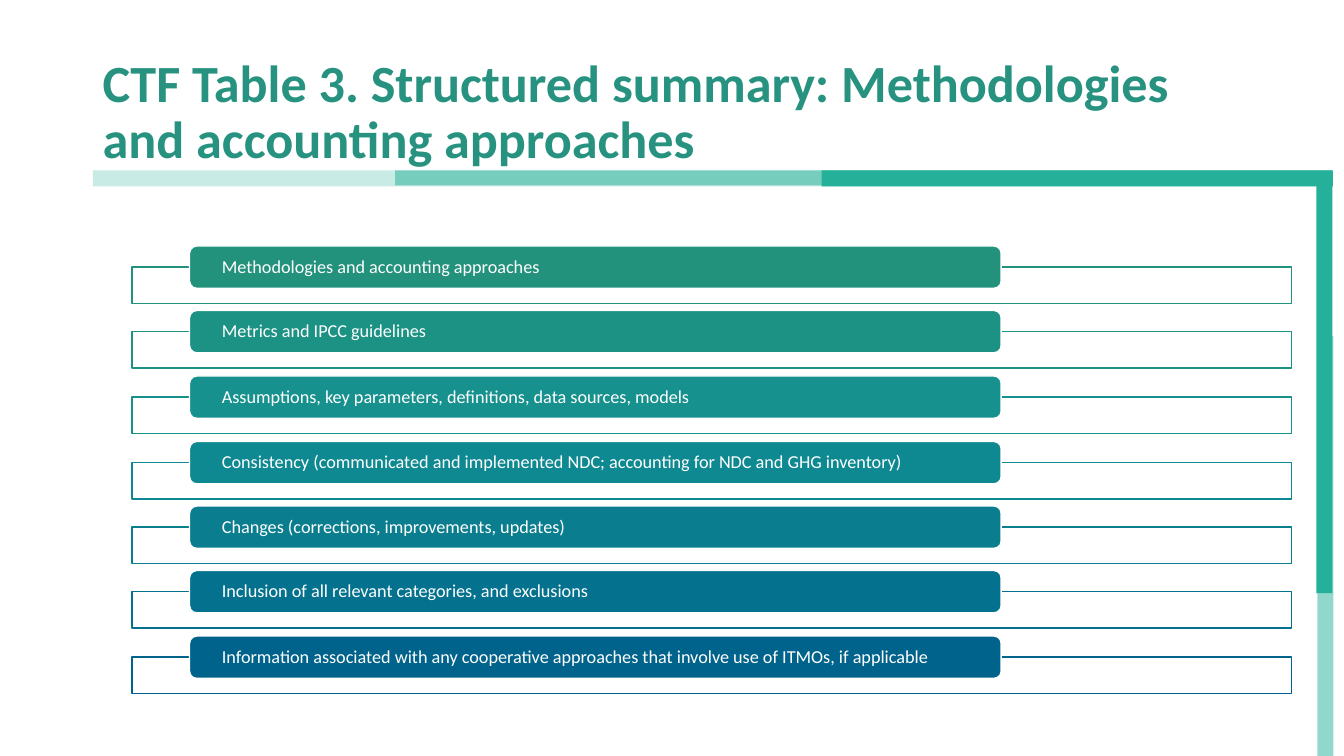
from dataclasses import dataclass

from lxml import etree
from pptx import Presentation
from pptx.dml.color import RGBColor
from pptx.enum.shapes import MSO_SHAPE
from pptx.enum.text import MSO_ANCHOR, PP_ALIGN
from pptx.oxml.ns import qn
from pptx.shapes.autoshape import Shape
from pptx.slide import Slide
from pptx.util import Emu, Pt

RECTANGLE = MSO_SHAPE.RECTANGLE
ROUNDED_RECTANGLE = MSO_SHAPE.ROUNDED_RECTANGLE
MIDDLE = MSO_ANCHOR.MIDDLE
LEFT = PP_ALIGN.LEFT

EMU_PER_PX = 9144  # 100 px to the inch
SLIDE_WIDTH, SLIDE_HEIGHT = 1333, 750
FONT = "Calibri"
COLORS = {"accent": "25B199", "title": "26927F", "white": "FFFFFF"}

TITLE = "CTF Table 3. Structured summary: Methodologies and accounting approaches"
FRAME_LEFT, FRAME_TOP, FRAME_WIDTH, FRAME_HEIGHT = 131, 265, 1150, 36
LABEL_LEFT, LABEL_TOP, LABEL_WIDTH, LABEL_HEIGHT = 188, 244, 805, 42
LAST_ROW_OFFSET = 387


@dataclass(frozen=True)
class Box:
    left: int
    top: int
    width: int
    height: int


@dataclass(frozen=True)
class Bar:
    box: Box
    opacity: int = 100
    rotation: int = 0


@dataclass(frozen=True)
class Topic:
    text: str
    color: str


BARS = [
    Bar(Box(1106, 534, 417, 16), opacity=50, rotation=90),
    Bar(Box(92, 169, 1229, 16), opacity=25),
    Bar(Box(392, 169, 929, 15), opacity=50),
    Bar(Box(815, 169, 507, 16)),
    Bar(Box(1105, 372, 417, 16), rotation=90),
]

TOPICS = [
    Topic("Methodologies and accounting approaches", "23927D"),
    Topic("Metrics and IPCC guidelines", "1C9285"),
    Topic("Assumptions, key parameters, definitions, data sources, models", "16918E"),
    Topic("Consistency (communicated and implemented NDC; accounting for NDC and GHG inventory)", "0F8991"),
    Topic("Changes (corrections, improvements, updates)", "0A7E8F"),
    Topic("Inclusion of all relevant categories, and exclusions", "04728E"),
    Topic("Information associated with any cooperative approaches that involve use of ITMOs, if applicable", "00638B"),
]


def px(length: int) -> Emu:
    return Emu(length * EMU_PER_PX)


def place(box: Box) -> tuple[Emu, Emu, Emu, Emu]:
    return px(box.left), px(box.top), px(box.width), px(box.height)


def add_block(slide: Slide, kind: MSO_SHAPE, box: Box, fill: str,
              line: str | None = None, opacity: int = 100) -> Shape:
    shape = slide.shapes.add_shape(kind, *place(box))
    shape.shadow.inherit = False
    shape.fill.solid()
    shape.fill.fore_color.rgb = RGBColor.from_string(fill)
    if opacity < 100:
        color = shape.fill._xPr.find(qn("a:solidFill"))[0]
        etree.SubElement(color, qn("a:alpha"), val=str(opacity * 1000))
    if line is None:
        shape.line.fill.background()
    else:
        shape.line.color.rgb = RGBColor.from_string(line)
        shape.line.width = Pt(1)
    return shape


def write(shape: Shape, text: str, size: float, color: str,
          side_inset: int, edge_inset: int, bold: bool = False) -> None:
    """Set one left-aligned, vertically centred paragraph in the shape."""
    frame = shape.text_frame
    frame.word_wrap = True
    frame.vertical_anchor = MIDDLE
    frame.margin_left = frame.margin_right = px(side_inset)
    frame.margin_top = frame.margin_bottom = px(edge_inset)
    paragraph = frame.paragraphs[0]
    paragraph.alignment = LEFT
    paragraph.line_spacing = 0.9
    run = paragraph.add_run()
    run.text = text
    run.font.name = FONT
    run.font.size = Pt(size)
    run.font.bold = bold
    run.font.color.rgb = RGBColor.from_string(color)


def add_bar(slide: Slide, bar: Bar) -> None:
    shape = add_block(slide, RECTANGLE, bar.box, COLORS["accent"], opacity=bar.opacity)
    shape.rotation = bar.rotation


def add_topic(slide: Slide, topic: Topic, offset: int) -> None:
    """Draw an outlined frame with the coloured label over its top edge."""
    frame_box = Box(FRAME_LEFT, FRAME_TOP + offset, FRAME_WIDTH, FRAME_HEIGHT)
    add_block(slide, RECTANGLE, frame_box, COLORS["white"], topic.color, opacity=90)
    label_box = Box(LABEL_LEFT, LABEL_TOP + offset, LABEL_WIDTH, LABEL_HEIGHT)
    label = add_block(slide, ROUNDED_RECTANGLE, label_box, topic.color, COLORS["white"])
    label.adjustments[0] = 0.17
    write(label, topic.text, 13, COLORS["white"], side_inset=30, edge_inset=0)


def main() -> None:
    presentation = Presentation()
    presentation.slide_width = px(SLIDE_WIDTH)
    presentation.slide_height = px(SLIDE_HEIGHT)
    slide = presentation.slides.add_slide(presentation.slide_layouts[6])

    for bar in BARS:
        add_bar(slide, bar)
    title = slide.shapes.add_textbox(*place(Box(92, 40, 1150, 145)))
    write(title, TITLE, 37.3, COLORS["title"], side_inset=10, edge_inset=5, bold=True)
    for index, topic in enumerate(TOPICS):
        add_topic(slide, topic, round(index * LAST_ROW_OFFSET / (len(TOPICS) - 1)))

    presentation.save("out.pptx")


if __name__ == "__main__":
    main()
